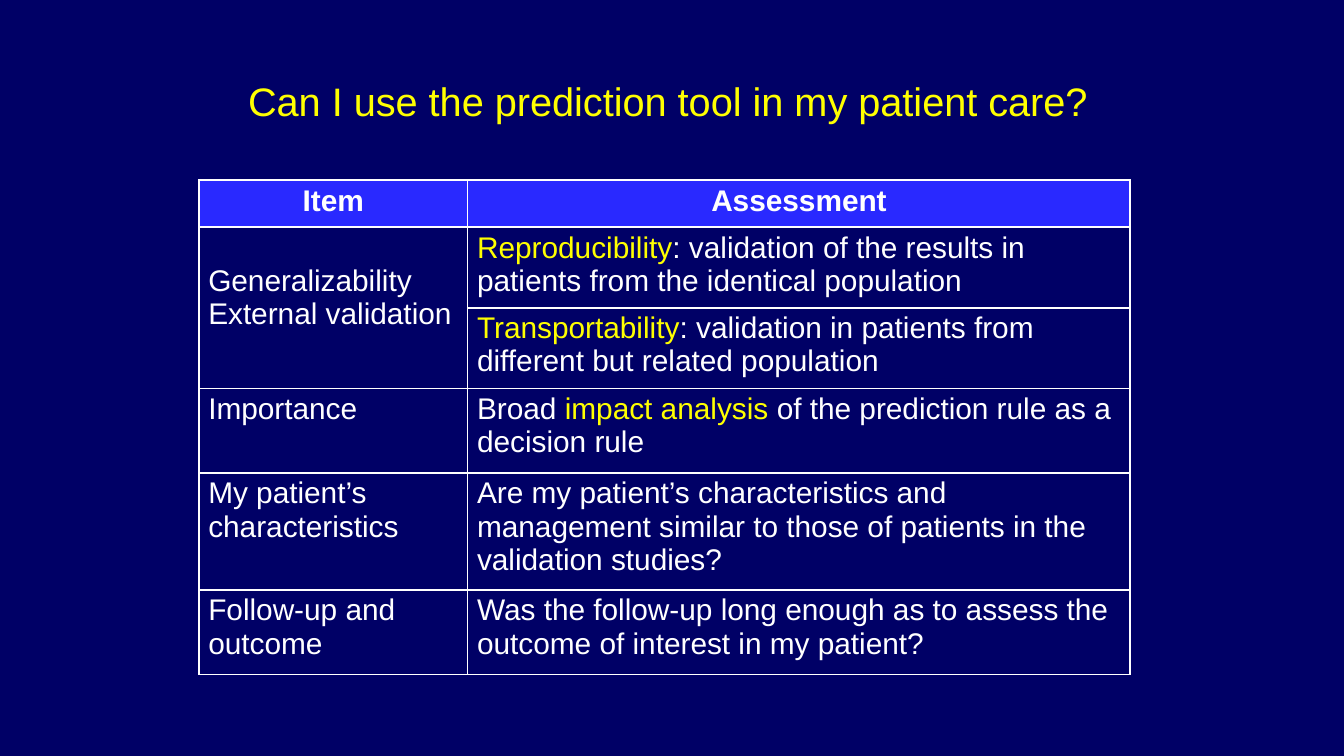
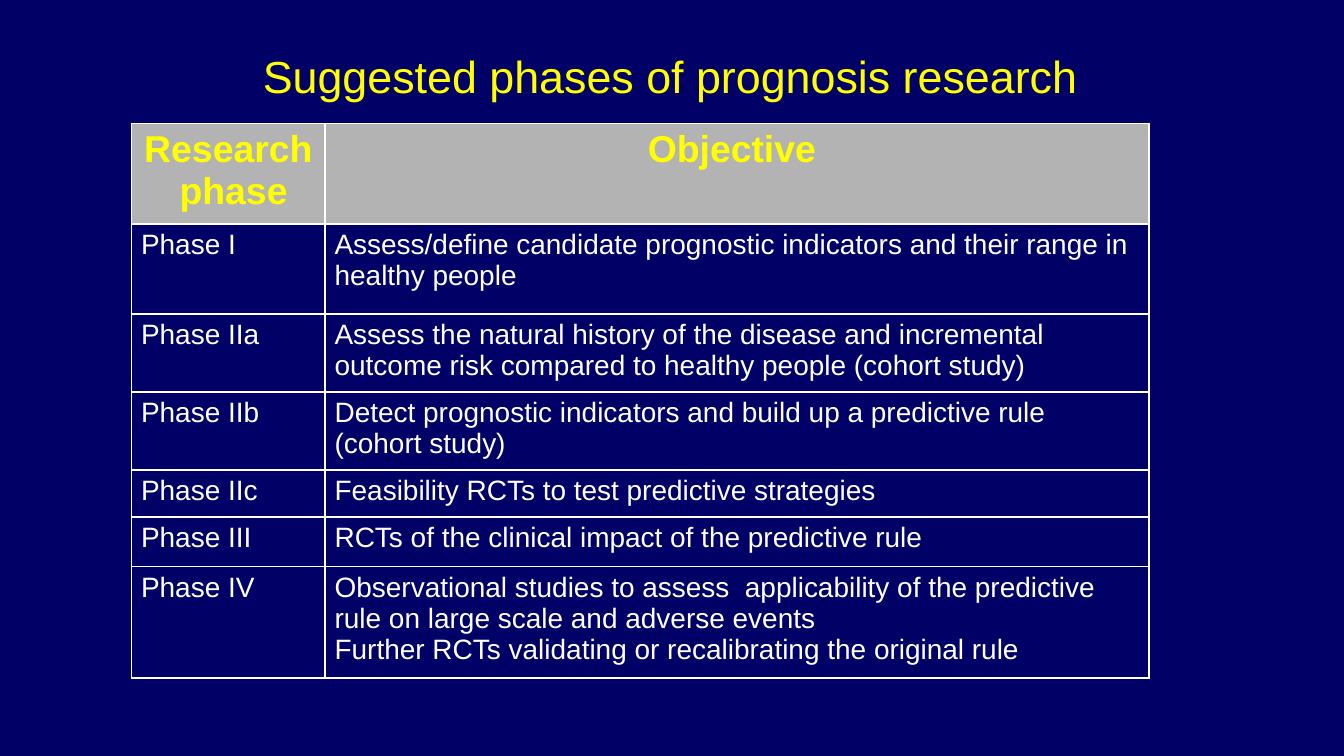
from lxml import etree
from pptx import Presentation
from pptx.dml.color import RGBColor
from pptx.enum.text import MSO_ANCHOR, PP_ALIGN
from pptx.oxml.ns import qn
from pptx.util import Inches, Pt

CENTER, LEFT = PP_ALIGN.CENTER, PP_ALIGN.LEFT
MIDDLE = MSO_ANCHOR.MIDDLE
FONT = "Arial"
BLANK_LAYOUT = 6
SLIDE_WIDTH = 10
COLORS = {
    "background": "000066",
    "accent": "FFFF00",
    "text": "FFFFFF",
    "blue_header": "2929FF",
    "gray_header": "B3B3B3",
}

ASSESSMENT_ROWS = [
    ("Item", "Assessment"),
    ("Generalizability\nExternal validation",
     "|Reproducibility|: validation of the results in patients from the identical population"),
    ("", "|Transportability|: validation in patients from different but related population"),
    ("Importance", "Broad |impact analysis |of the prediction rule as a decision rule"),
    ("My patient’s characteristics",
     "Are my patient’s characteristics and management similar to those of patients "
     "in the validation studies?"),
    ("Follow-up and outcome",
     "Was the follow-up long enough as to assess the outcome of interest in my patient?"),
]
PHASE_ROWS = [
    ("Research  phase", "Objective "),
    ("Phase I",
     "Assess/define candidate prognostic indicators and their range in healthy people"),
    ("Phase IIa",
     "Assess the natural history of the disease and incremental outcome risk "
     "compared to healthy people (cohort study)"),
    ("Phase IIb",
     "Detect prognostic indicators and build up a predictive rule (cohort study)"),
    ("Phase IIc", "Feasibility RCTs to test predictive strategies"),
    ("Phase III", "RCTs of the clinical impact of the predictive rule"),
    ("Phase IV",
     "Observational studies to assess  applicability of the predictive  rule "
     "on large scale and adverse events\n"
     "Further RCTs validating or recalibrating the original rule"),
]


def rgb(name):
    return RGBColor.from_string(COLORS[name])


def write_text(frame, text, size, color, align=LEFT, bold=False):
    """Write one paragraph per line; text between bars gets the accent colour."""
    frame.word_wrap = True
    for number, line in enumerate(text.split("\n")):
        paragraph = frame.paragraphs[0] if number == 0 else frame.add_paragraph()
        paragraph.alignment = align
        font = paragraph.font
        font.name, font.size, font.bold = FONT, Pt(size), bold
        font.color.rgb = rgb(color)
        for part, words in enumerate(line.split("|")):
            if words:
                run = paragraph.add_run()
                run.text = words
                if part % 2:
                    run.font.color.rgb = rgb("accent")


def add_slide(prs, title, box, size):
    slide = prs.slides.add_slide(prs.slide_layouts[BLANK_LAYOUT])
    slide.background.fill.solid()
    slide.background.fill.fore_color.rgb = rgb("background")
    frame = slide.shapes.add_textbox(*map(Inches, box)).text_frame
    frame.vertical_anchor = MIDDLE
    write_text(frame, title, size, "accent", CENTER)
    return slide


def add_borders(cell):
    properties = cell._tc.get_or_add_tcPr()
    for side in ("a:lnL", "a:lnR", "a:lnT", "a:lnB"):
        line = etree.SubElement(properties, qn(side), w=str(Pt(1)))
        fill = etree.SubElement(line, qn("a:solidFill"))
        etree.SubElement(fill, qn("a:srgbClr"), val=COLORS["text"])


def add_table(slide, rows, box, widths, heights, margin,
              header_fill, header_color, header_size, body_size):
    frame = slide.shapes.add_table(len(rows), len(widths), *map(Inches, box))
    table = frame.table
    table.horz_banding = False
    for column, width in zip(table.columns, widths):
        column.width = Inches(width)
    for row, height in zip(table.rows, heights):
        row.height = Inches(height)
    # Row heights reset the frame, which may be taller than their sum.
    frame.height = Inches(box[3])
    for r, texts in enumerate(rows):
        for c, text in enumerate(texts):
            cell = table.cell(r, c)
            cell.margin_left = cell.margin_right = Inches(0.07)
            cell.margin_top = cell.margin_bottom = Inches(margin)
            add_borders(cell)
            if r == 0:
                cell.fill.solid()
                cell.fill.fore_color.rgb = rgb(header_fill)
                write_text(cell.text_frame, text, header_size, header_color, CENTER, True)
            else:
                cell.fill.background()
                write_text(cell.text_frame, text, body_size, "text")
    return table


def main():
    prs = Presentation()
    prs.slide_width, prs.slide_height = Inches(SLIDE_WIDTH), Inches(SLIDE_WIDTH * 9 / 16)

    slide = add_slide(prs, "Can I use the prediction tool in my patient care?",
                      (1.48, 0.45, 6.98, 0.59), 21.3)
    assessment = add_table(slide, ASSESSMENT_ROWS, (1.48, 1.34, 6.93, 3.68), (2, 4.93),
                           (0.35, 0.6, 0.6, 0.63, 0.87, 0.63), 0.03,
                           "blue_header", "text", 16, 16)
    generalizability = assessment.cell(1, 0)
    generalizability.merge(assessment.cell(2, 0))
    generalizability.margin_top = Inches(0.28)

    slide = add_slide(prs, "Suggested phases of prognosis research",
                      (1.4, 0.21, 7.17, 0.71), 24)
    add_table(slide, PHASE_ROWS, (0.98, 0.92, 7.58, 4.11), (1.44, 6.13),
              (0.67, 0.67, 0.57, 0.57, 0.35, 0.37, 0.82), 0.04,
              "gray_header", "accent", 20, 15)

    prs.save("out.pptx")


if __name__ == "__main__":
    main()
